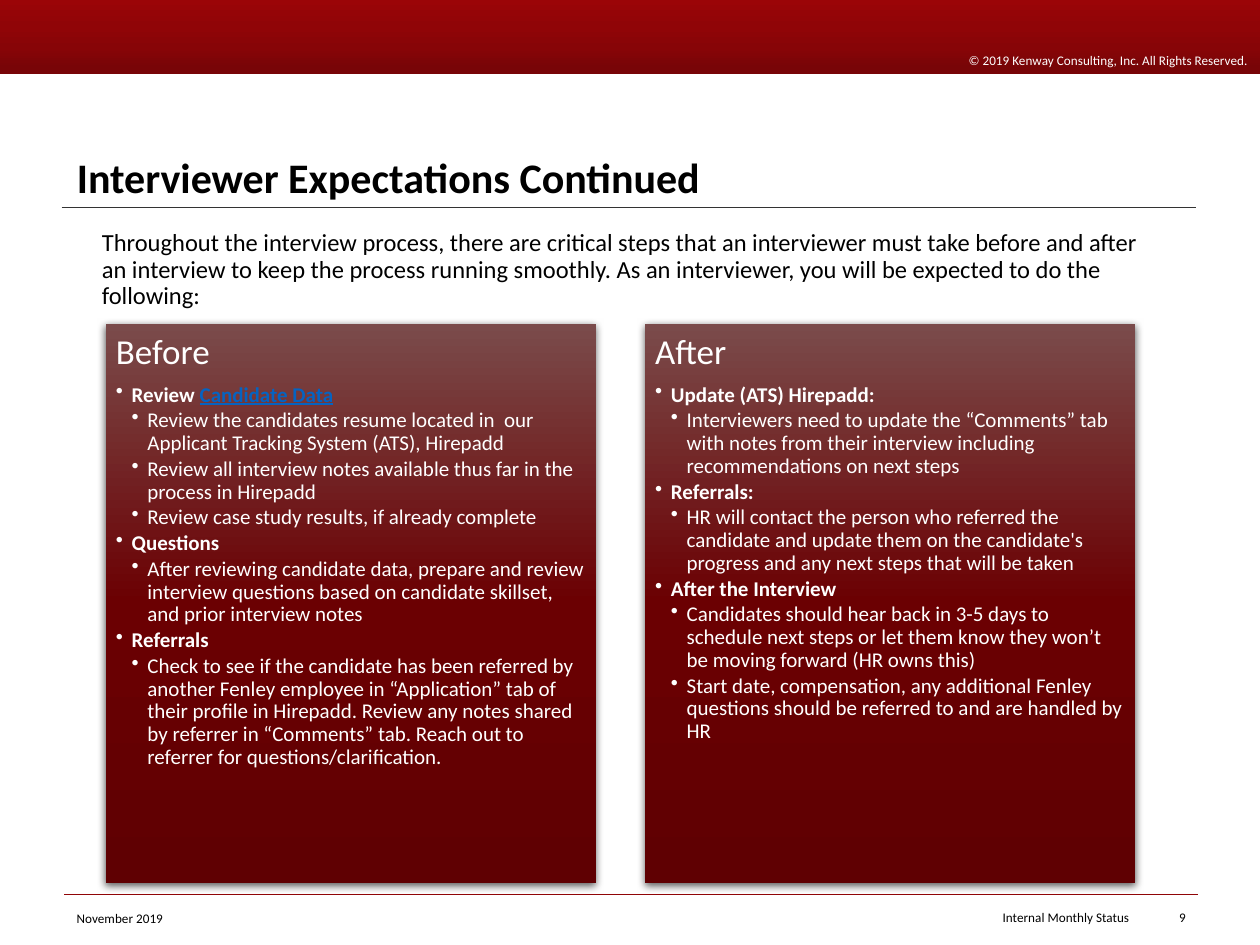
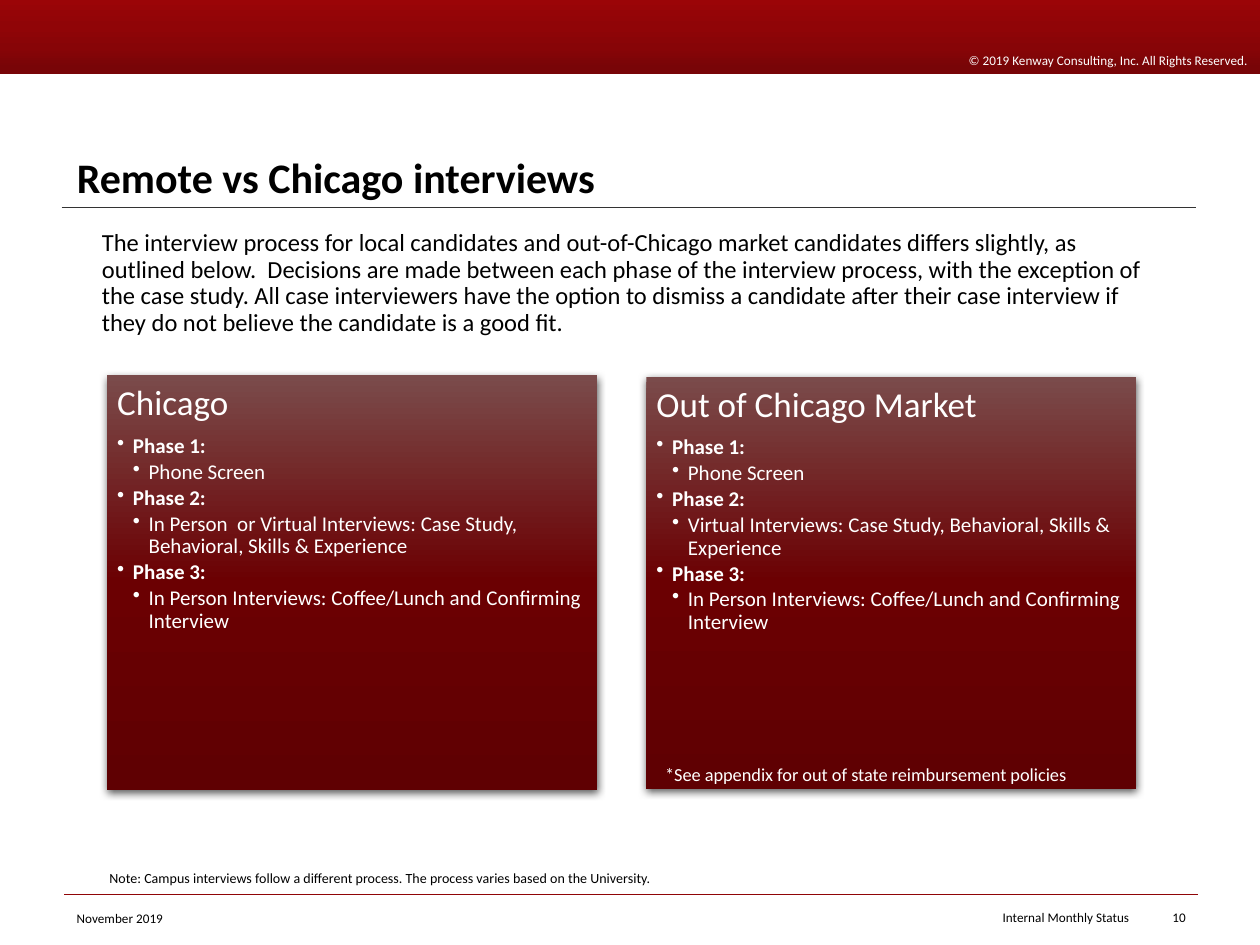
from lxml import etree
from pptx import Presentation
from pptx.dml.color import RGBColor
from pptx.enum.shapes import MSO_CONNECTOR, MSO_SHAPE
from pptx.enum.text import MSO_ANCHOR, MSO_AUTO_SIZE, PP_ALIGN
from pptx.oxml.ns import qn
from pptx.util import Inches, Pt

RECTANGLE = MSO_SHAPE.RECTANGLE
STRAIGHT = MSO_CONNECTOR.STRAIGHT
TOP, MIDDLE, BOTTOM = MSO_ANCHOR.TOP, MSO_ANCHOR.MIDDLE, MSO_ANCHOR.BOTTOM
LEFT, RIGHT = PP_ALIGN.LEFT, PP_ALIGN.RIGHT
NO_AUTOFIT = MSO_AUTO_SIZE.NONE

FONT = "Calibri"
BLACK = RGBColor(0x00, 0x00, 0x00)
WHITE = RGBColor(0xFF, 0xFF, 0xFF)
RED = RGBColor(0x90, 0x05, 0x07)
CHARCOAL = RGBColor(0x33, 0x33, 0x33)
LINK_BLUE = RGBColor(0x05, 0x63, 0xC1)
BAND_STOPS = [
    (0, RGBColor(0x9B, 0x05, 0x07)),
    (35, RED),
    (65, RGBColor(0x87, 0x05, 0x07)),
    (91, RGBColor(0x78, 0x05, 0x07)),
]
CARD_STOPS = [
    (0, RGBColor(0x7A, 0x4B, 0x4B)),
    (50, RGBColor(0x6B, 0x00, 0x02)),
    (100, RGBColor(0x5F, 0x00, 0x02)),
]
CARD_WIDTH = 3.89
INDENT = 0.125


class Deck:
    def __init__(self):
        self.presentation = Presentation()
        self.presentation.slide_width = Inches(10)
        self.presentation.slide_height = Inches(7.5)
        self.slide = None

    def add_slide(self, title, number, introduction):
        layout = self.presentation.slide_layouts[5]
        self.slide = self.presentation.slides.add_slide(layout)
        self.band("© 2019 Kenway Consulting, Inc. All Rights Reserved.")
        self.rule(0.51, 7.1, RED)
        self.rule(0.49, 1.65, CHARCOAL)
        self.text("Internal Monthly Status", 6.52, 7.14, 2.54, 0.28, 7.5,
                  align=RIGHT, anchor=MIDDLE)
        self.text("November 2019", 0.51, 7.15, 1.36, 0.28, 7.5, anchor=MIDDLE)
        self.text(str(number), 9.1, 7.14, 0.41, 0.28, 7.5,
                  align=RIGHT, anchor=MIDDLE)
        self.title(title)
        self.text(introduction, 0.71, 1.78, 8.58, 1.1, 14, spacing=0.9)

    def format(self, paragraph, size, color, bold=False, align=LEFT, spacing=1.0):
        paragraph.alignment = align
        paragraph.line_spacing = spacing
        font = paragraph.font
        font.name, font.size, font.bold = FONT, Pt(size), bold
        font.color.rgb = color

    def title(self, text):
        shape = self.slide.shapes.title
        shape.left, shape.top = Inches(0.51), Inches(0.86)
        shape.width, shape.height = Inches(9), Inches(0.79)
        frame = shape.text_frame
        frame.text = text
        frame.auto_size = NO_AUTOFIT
        frame.vertical_anchor = BOTTOM
        self.format(frame.paragraphs[0], 24, BLACK, bold=True)

    def text(self, text, left, top, width, height, size, color=BLACK,
             align=LEFT, anchor=TOP, spacing=1.0):
        shape = self.slide.shapes.add_textbox(
            Inches(left), Inches(top), Inches(width), Inches(height))
        frame = shape.text_frame
        frame.word_wrap = True
        frame.vertical_anchor = anchor
        frame.text = text
        self.format(frame.paragraphs[0], size, color, align=align, spacing=spacing)

    def rule(self, left, top, color):
        line = self.slide.shapes.add_connector(
            STRAIGHT, Inches(left), Inches(top), Inches(left + 9), Inches(top))
        line.line.color.rgb = color
        line.line.width = Pt(0.5)
        etree.SubElement(line._element.spPr, qn("a:effectLst"))

    def gradient_box(self, left, top, width, height, stops):
        shape = self.slide.shapes.add_shape(
            RECTANGLE, Inches(left), Inches(top), Inches(width), Inches(height))
        shape.shadow.inherit = False
        shape.line.fill.background()
        shape.fill.gradient()
        shape.fill.gradient_angle = 270
        stop_list = shape._element.spPr.find(".//" + qn("a:gsLst"))
        for stop in list(stop_list):
            stop_list.remove(stop)
        for position, color in stops:
            stop = etree.SubElement(stop_list, qn("a:gs"), pos=str(position * 1000))
            etree.SubElement(stop, qn("a:srgbClr"), val=str(color))
        return shape

    def band(self, text):
        shape = self.gradient_box(0, 0, 10, 0.59, BAND_STOPS)
        frame = shape.text_frame
        frame.text = text
        frame.vertical_anchor = BOTTOM
        self.format(frame.paragraphs[0], 7.5, WHITE, align=RIGHT)

    def add_shadow(self, shape):
        effects = shape._element.spPr.find(qn("a:effectLst"))
        shadow = etree.SubElement(
            effects, qn("a:outerShdw"), blurRad=str(Pt(4.5)), dist=str(Pt(1.5)),
            dir="5400000", algn="ctr", rotWithShape="0")
        color = etree.SubElement(shadow, qn("a:srgbClr"), val=str(BLACK))
        etree.SubElement(color, qn("a:alpha"), val="63000")

    def bullet(self, frame, text, level, link=""):
        paragraph = frame.add_paragraph()
        paragraph.level = level
        properties = paragraph._p.get_or_add_pPr()
        properties.set("marL", str(Inches(INDENT * level)))
        properties.set("indent", str(-Inches(INDENT)))
        etree.SubElement(properties, qn("a:buChar"), char="•")
        paragraph.add_run().text = text
        if link:
            run = paragraph.add_run()
            run.text = link
            run.font.color.rgb = LINK_BLUE
            run.font.underline = True
        self.format(paragraph, 12, WHITE, bold=level == 1, spacing=0.9)
        paragraph.space_after = Pt(1.8)

    def card(self, heading, sections, left, top, height):
        shape = self.gradient_box(left, top, CARD_WIDTH, height, CARD_STOPS)
        self.add_shadow(shape)
        frame = shape.text_frame
        frame.word_wrap = True
        frame.vertical_anchor = TOP
        frame.margin_left = frame.margin_right = Inches(0.08)
        frame.margin_top = frame.margin_bottom = Inches(0.08)
        frame.text = heading
        self.format(frame.paragraphs[0], 20, WHITE, spacing=0.9)
        frame.paragraphs[0].space_after = Pt(7)
        for label, link, details in sections:
            self.bullet(frame, label, 1, link)
            for detail in details:
                self.bullet(frame, detail, 2)


BEFORE = [
    ("Review ", "Candidate Data", [
        "Review the candidates resume located in  our Applicant Tracking System (ATS), Hirepadd",
        "Review all interview notes available thus far in the process in Hirepadd",
        "Review case study results, if already complete",
    ]),
    ("Questions", "", [
        "After reviewing candidate data, prepare and review interview questions "
        "based on candidate skillset, and prior interview notes",
    ]),
    ("Referrals", "", [
        "Check to see if the candidate has been referred by another Fenley employee "
        "in “Application” tab of their profile in Hirepadd. Review any notes shared "
        "by referrer in “Comments” tab. Reach out to referrer for "
        "questions/clarification.",
    ]),
]
AFTER = [
    ("Update (ATS) Hirepadd:", "", [
        "Interviewers need to update the “Comments” tab with notes from their "
        "interview including recommendations on next steps",
    ]),
    ("Referrals:", "", [
        "HR will contact the person who referred the candidate and update them on "
        "the candidate's progress and any next steps that will be taken",
    ]),
    ("After the Interview", "", [
        "Candidates should hear back in 3-5 days to schedule next steps or let them "
        "know they won’t be moving forward (HR owns this)",
        "Start date, compensation, any additional Fenley questions should be "
        "referred to and are handled by HR",
    ]),
]


def phases(second_phase):
    steps = [
        "Phone Screen",
        second_phase,
        "In Person Interviews: Coffee/Lunch and Confirming Interview",
    ]
    return [(f"Phase {number}:", "", [step]) for number, step in enumerate(steps, 1)]


def main():
    deck = Deck()

    deck.add_slide(
        "Interviewer Expectations Continued", 9,
        "Throughout the interview process, there are critical steps that an "
        "interviewer must take before and after an interview to keep the process "
        "running smoothly. As an interviewer, you will be expected to do the following:")
    deck.card("Before", BEFORE, 0.84, 2.57, 4.44)
    deck.card("After", AFTER, 5.12, 2.57, 4.44)

    deck.add_slide(
        "Remote vs Chicago interviews", 10,
        "The interview process for local candidates and out-of-Chicago market "
        "candidates differs slightly, as outlined below.  Decisions are made between "
        "each phase of the interview process, with the exception of the case study. "
        "All case interviewers have the option to dismiss a candidate after their "
        "case interview if they do not believe the candidate is a good fit.")
    virtual = "Virtual Interviews: Case Study, Behavioral, Skills & Experience"
    deck.card("Chicago", phases("In Person  or " + virtual), 0.85, 2.98, 3.29)
    deck.card("Out of Chicago Market", phases(virtual), 5.13, 2.99, 3.27)
    deck.text("Note: Campus interviews follow a different process. "
              "The process varies based on the University.",
              0.77, 6.85, 8.74, 0.24, 8)
    deck.text("*See appendix for out of state reimbursement policies",
              5.18, 6.01, 3.61, 0.29, 10.5, color=WHITE)

    deck.presentation.save("out.pptx")


if __name__ == "__main__":
    main()
